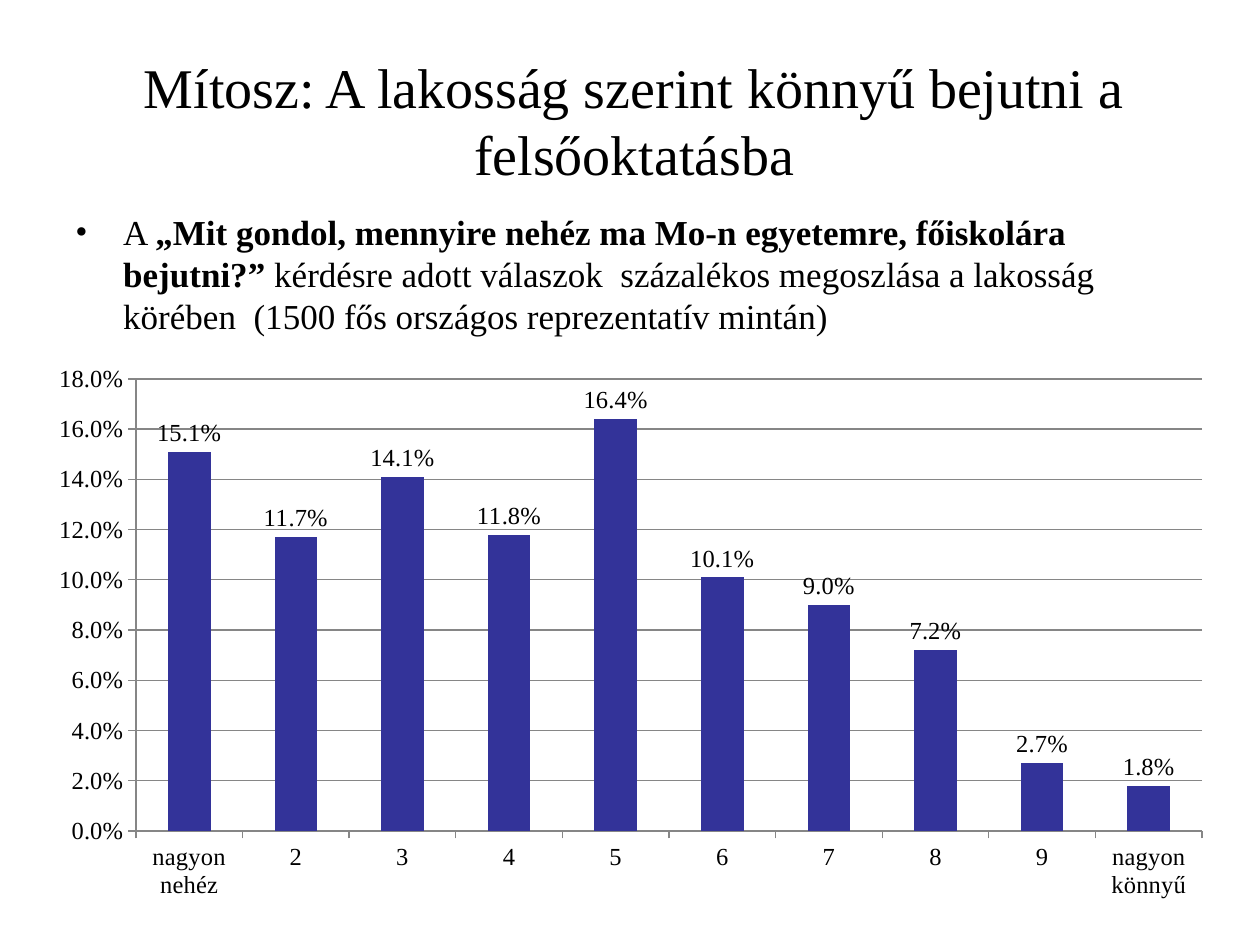
from lxml.etree import SubElement
from pptx import Presentation
from pptx.chart.data import CategoryChartData
from pptx.dml.color import RGBColor
from pptx.enum.chart import XL_CHART_TYPE, XL_LABEL_POSITION, XL_TICK_MARK
from pptx.enum.text import MSO_ANCHOR, MSO_AUTO_SIZE, PP_ALIGN
from pptx.oxml.ns import qn
from pptx.util import Inches, Pt

FONT = "Times New Roman"
TITLE = "Mítosz: A lakosság szerint könnyű bejutni a felsőoktatásba"
QUESTION = [
    ("A ", False),
    ("„Mit gondol, mennyire nehéz ma Mo-n egyetemre, főiskolára bejutni?” ", True),
    ("kérdésre adott válaszok  százalékos megoszlása a lakosság körében  "
     "(1500 fős országos reprezentatív mintán)", False),
]
ANSWERS = [
    ("nagyon nehéz", 0.151), ("2", 0.117), ("3", 0.141), ("4", 0.118), ("5", 0.164),
    ("6", 0.101), ("7", 0.09), ("8", 0.072), ("9", 0.027), ("nagyon könnyű", 0.018),
]
TITLE_BOX = (0.27, 0.44, 9.53, 1.02)
QUESTION_BOX = (0.5, 1.62, 9, 1.15)
CHART_BOX = (0.28, 2.81, 9.45, 4.41)


def rgb(value):
    return RGBColor.from_string(value)


def set_font(font, size, bold=False):
    for name, value in {"name": FONT, "size": Pt(size), "bold": bold}.items():
        setattr(font, name, value)
    font.color.rgb = rgb("000000")


def place(sp, box):
    for name, value in zip(("left", "top", "width", "height"), box):
        setattr(sp, name, Inches(value))


def add_title(s):
    sp = s.shapes.title
    place(sp, TITLE_BOX)
    tf = sp.text_frame
    tf.text = TITLE
    for name, value in {"word_wrap": True, "auto_size": MSO_AUTO_SIZE.NONE,
                        "vertical_anchor": MSO_ANCHOR.MIDDLE}.items():
        setattr(tf, name, value)
    p = tf.paragraphs[0]
    p.alignment = PP_ALIGN.CENTER
    set_font(p.runs[0].font, 32)


def add_question(s):
    tf = s.shapes.add_textbox(*map(Inches, QUESTION_BOX)).text_frame
    tf.word_wrap = True
    p = tf.paragraphs[0]
    p.space_before = Pt(4)
    for text, bold in QUESTION:
        r = p.add_run()
        r.text = text
        set_font(r.font, 20, bold)
    pPr = p._p.get_or_add_pPr()
    pPr.set("marL", str(Inches(0.38)))
    pPr.set("indent", str(Inches(-0.38)))
    SubElement(pPr, qn("a:buFont"), typeface=FONT)
    SubElement(pPr, qn("a:buChar"), char="•")


def add_answers(s):
    data = CategoryChartData(number_format="0.0%")
    data.categories = [name for name, _ in ANSWERS]
    data.add_series("Series 1", [value for _, value in ANSWERS])
    chart = s.shapes.add_chart(
        XL_CHART_TYPE.COLUMN_CLUSTERED, *map(Inches, CHART_BOX), data).chart
    chart.has_legend = False
    chart.has_title = False
    set_font(chart.font, 14)

    value_axis, category_axis = chart.value_axis, chart.category_axis
    for name, value in {"minimum_scale": 0, "maximum_scale": 0.18, "major_unit": 0.02,
                        "has_major_gridlines": True}.items():
        setattr(value_axis, name, value)
    for axis in (value_axis, category_axis):
        axis.major_tick_mark = XL_TICK_MARK.OUTSIDE
        set_font(axis.tick_labels.font, 14)
    value_axis.tick_labels.number_format = "0.0%"
    value_axis.tick_labels.number_format_is_linked = False
    for line in (value_axis.format.line, category_axis.format.line,
                 value_axis.major_gridlines.format.line):
        line.color.rgb = rgb("868686")
        line.width = Pt(0.75)

    plot = chart.plots[0]
    plot.gap_width = 150
    plot.vary_by_categories = False
    fill = plot.series[0].format.fill
    fill.solid()
    fill.fore_color.rgb = rgb("333399")
    plot.has_data_labels = True
    labels = plot.data_labels
    for name, value in {"show_value": True, "number_format": "0.0%",
                        "number_format_is_linked": False,
                        "position": XL_LABEL_POSITION.OUTSIDE_END}.items():
        setattr(labels, name, value)
    set_font(labels.font, 14)


def main():
    prs = Presentation()
    prs.slide_width, prs.slide_height = Inches(10), Inches(7.5)
    s = prs.slides.add_slide(prs.slide_layouts[5])
    add_title(s)
    add_question(s)
    add_answers(s)
    prs.save("out.pptx")


if __name__ == "__main__":
    main()
